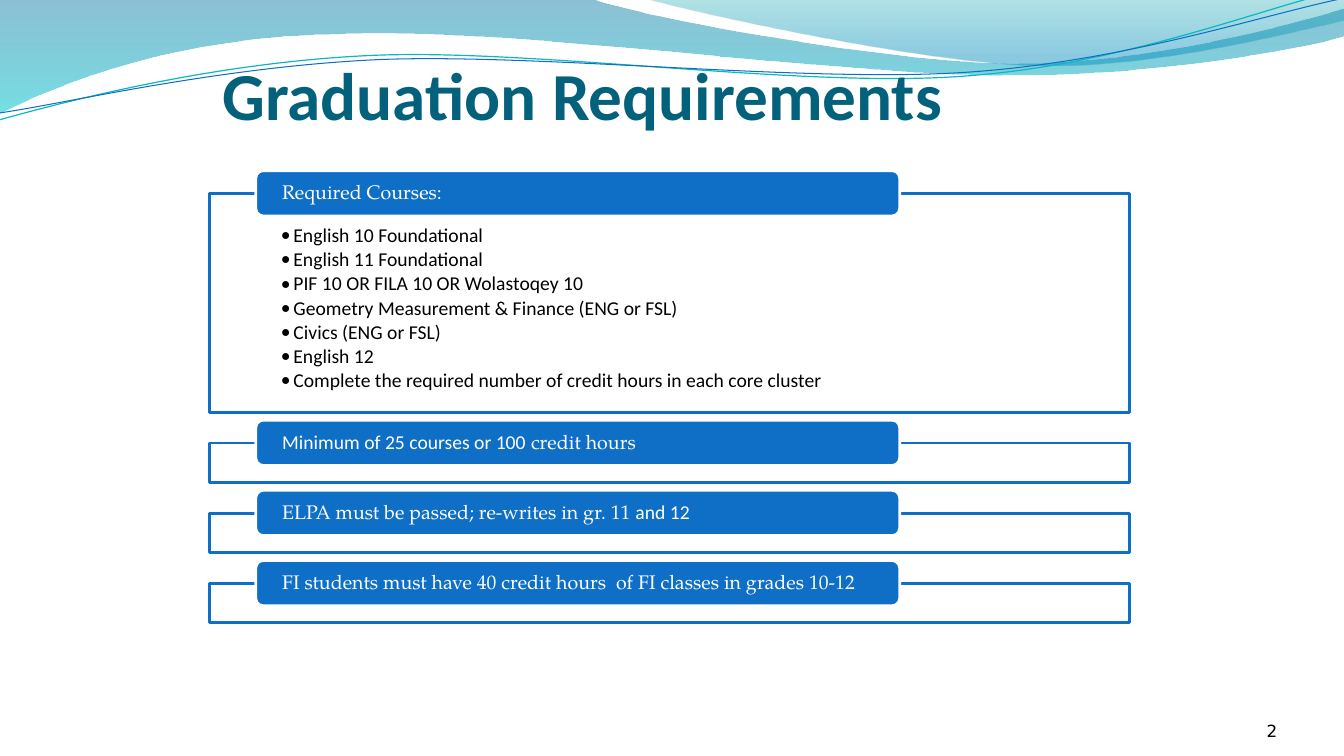
from dataclasses import dataclass

from lxml.etree import SubElement
from pptx import Presentation
from pptx.dml.color import RGBColor as RGB
from pptx.enum.shapes import MSO_SHAPE as SHAPE
from pptx.enum.text import MSO_ANCHOR as ANCHOR, MSO_AUTO_SIZE as AUTO, PP_ALIGN as ALIGN
from pptx.oxml.ns import qn
from pptx.util import Pt


@dataclass(frozen=True)
class Theme:
    blue: RGB = RGB(0x0F, 0x6F, 0xC6)
    teal: RGB = RGB(0x0A, 0xB8, 0xBF)
    title: RGB = RGB(0x04, 0x61, 0x7B)
    white: RGB = RGB(255, 255, 255)
    black: RGB = RGB(0, 0, 0)
    sans: str = "Calibri"
    serif: str = "TeX Gyre Pagella"
    number: str = "DejaVu Sans"
    title_size: int = 48
    body_size: int = 14
    number_size: int = 12


T = Theme()


def add_run(p, text, font, size, color, bold=False):
    r = p.add_run()
    r.text = text
    r.font.name, r.font.size, r.font.bold = font, Pt(size), bold
    r.font.color.rgb = color


def add_wave(shapes, start, segments, close):
    builder = shapes.build_freeform(Pt(start[0]), Pt(start[1]))
    points = [(Pt(x), Pt(y)) for seg in segments for x, y in zip(seg[::2], seg[1::2])]
    builder.add_line_segments(points, close=close)
    sp = builder.convert_to_shape()
    sp.shadow.inherit = False
    steps = iter(list(sp._element.spPr.iter(qn("a:lnTo"))))
    for seg in segments:
        step = next(steps)
        if len(seg) == 6:
            step.tag = qn("a:cubicBezTo")
            for _ in range(2):
                extra = next(steps)
                step.append(extra[0])
                extra.getparent().remove(extra)
    return sp


prs = Presentation()
prs.slide_width, prs.slide_height = Pt(960), Pt(540)
s = prs.slides.add_slide(prs.slide_layouts[5])
shapes = s.shapes

bands = [
    ((0, 0), [(422.6, -0.7), (456.5, 12.2, 637.2, 45.4, 727.9, 45.4),
              (819.4, 45.4, 920.2, 18.7, 959.8, 6.5), (961.2, 25.9),
              (943.9, 31.7, 835.2, 54.7, 715.7, 54), (596.9, 54, 366.5, 20.2, 247, 24.5),
              (123.8, 25.9, 43.9, 59.8, -0.7, 81.4)],
     [(0, RGB(0x00, 0x74, 0xA1), 45), (1, RGB(0x00, 0xC6, 0xCF), 55)]),
    ((460.1, -0.7), [(488.9, 7.9, 654.5, 44.6, 738, 46.8),
                     (821.5, 49.7, 923, 23, 959.8, 15.1), (959.8, 0)],
     [(0, RGB(0x00, 0xA1, 0xA9), 30), (0.8, RGB(0x00, 0x8B, 0xBF), 45)]),
]
for start, segments, stops in bands:
    sp = add_wave(shapes, start, segments, True)
    sp.line.fill.background()
    sp.fill.gradient()
    sp.fill.gradient_angle = 270
    for stop, (position, color, _) in zip(sp.fill.gradient_stops, stops):
        stop.position, stop.color.rgb = position, color
    colors = sp._element.spPr.find(qn("a:gradFill")).iter(qn("a:srgbClr"))
    for clr, (_, _, opacity) in zip(colors, stops):
        SubElement(clr, qn("a:alpha")).set("val", str(opacity * 1000))

strands = [
    ((-0.7, 85.7), [(46.1, 72.7, 151.9, 44.6, 265.7, 39.6),
                    (379.4, 34.6, 568.8, 62.6, 684, 54.7),
                    (799.2, 47.5, 901.4, 5.8, 958.3, -7.2)], T.teal, 0.85),
    ((0, 80.6), [(45.4, 74.2, 157, 47.5, 272.2, 42.5),
                 (386.6, 38.2, 573.1, 59, 687.6, 51.8),
                 (802.8, 44.6, 903.6, 10.1, 960.5, -1.4)], T.blue, 0.75),
]
for start, segments, color, width in strands:
    sp = add_wave(shapes, start, segments, False)
    sp.fill.background()
    sp.line.color.rgb, sp.line.width = color, Pt(width)

title = shapes.title
shapes._spTree.append(title._element)
title.left, title.top, title.width, title.height = Pt(159), Pt(31), Pt(648), Pt(64.8)
tf = title.text_frame
tf.auto_size, tf.vertical_anchor = AUTO.NONE, ANCHOR.BOTTOM
tf.margin_left = tf.margin_right = tf.margin_bottom = 0
tf.margin_top = Pt(3.6)
p = tf.paragraphs[0]
p.alignment = ALIGN.LEFT
add_run(p, "Graduation Requirements", T.sans, T.title_size, T.title, True)

courses = [
    "English 10 Foundational",
    "English 11 Foundational",
    "PIF 10 OR FILA 10 OR Wolastoqey 10",
    "Geometry Measurement & Finance (ENG or FSL)",
    "Civics (ENG or FSL)",
    "English 12",
    "Complete the required number of credit hours in each core cluster",
]
sections = [
    ([("Required Courses:", T.serif)], courses, 156.2),
    ([("Minimum of 25 courses or 100", T.sans), (" credit hours", T.serif)], [], 28.1),
    ([("ELPA must be passed; re-writes in gr. 11", T.serif), (" and 12", T.sans)], [], 28.1),
    ([("FI students must have 40 credit hours  of FI classes in grades 10-12", T.serif)], [], 28.1),
]
top, gap = 138.3, 22
for heading, bullets, height in sections:
    panel = shapes.add_shape(SHAPE.RECTANGLE, Pt(149.6), Pt(top), Pt(657.4), Pt(height))
    tab = shapes.add_shape(SHAPE.ROUNDED_RECTANGLE, Pt(182.7), Pt(top - 16.4), Pt(460), Pt(32.4))
    for sp, fill, line in ((panel, T.white, T.blue), (tab, T.blue, T.white)):
        sp.shadow.inherit = False
        sp.fill.solid()
        sp.fill.fore_color.rgb = fill
        sp.line.color.rgb, sp.line.width = line, Pt(2)
    clr = panel._element.spPr.find(qn("a:solidFill"))[0]
    SubElement(clr, qn("a:alpha")).set("val", "90000")

    tf = panel.text_frame
    tf.vertical_anchor = ANCHOR.TOP
    tf.margin_left = tf.margin_right = Pt(51)
    tf.margin_top, tf.margin_bottom = Pt(23), Pt(8)
    for i, course in enumerate(bullets):
        p = tf.add_paragraph() if i else tf.paragraphs[0]
        p.level = 1
        p.alignment, p.line_spacing, p.space_after = ALIGN.LEFT, 0.9, Pt(2.1)
        pPr = p._p.get_or_add_pPr()
        pPr.set("marL", str(Pt(9)))
        pPr.set("indent", str(Pt(-9)))
        SubElement(pPr, qn("a:buFont")).set("typeface", T.sans)
        SubElement(pPr, qn("a:buChar")).set("char", "•")
        add_run(p, course, T.sans, T.body_size, T.black)

    tf = tab.text_frame
    tf.vertical_anchor = ANCHOR.MIDDLE
    tf.margin_left = tf.margin_right = Pt(17.3)
    tf.margin_top = tf.margin_bottom = 0
    p = tf.paragraphs[0]
    p.alignment, p.line_spacing = ALIGN.LEFT, 0.9
    for text, font in heading:
        add_run(p, text, font, T.body_size, T.white)
    top += height + gap

tf = shapes.add_textbox(Pt(832.3), Pt(500.4), Pt(80), Pt(28.8)).text_frame
tf.word_wrap, tf.vertical_anchor = True, ANCHOR.BOTTOM
tf.margin_left = tf.margin_top = tf.margin_right = tf.margin_bottom = 0
p = tf.paragraphs[0]
p.alignment = ALIGN.RIGHT
add_run(p, "2", T.number, T.number_size, T.black)

prs.save("out.pptx")
